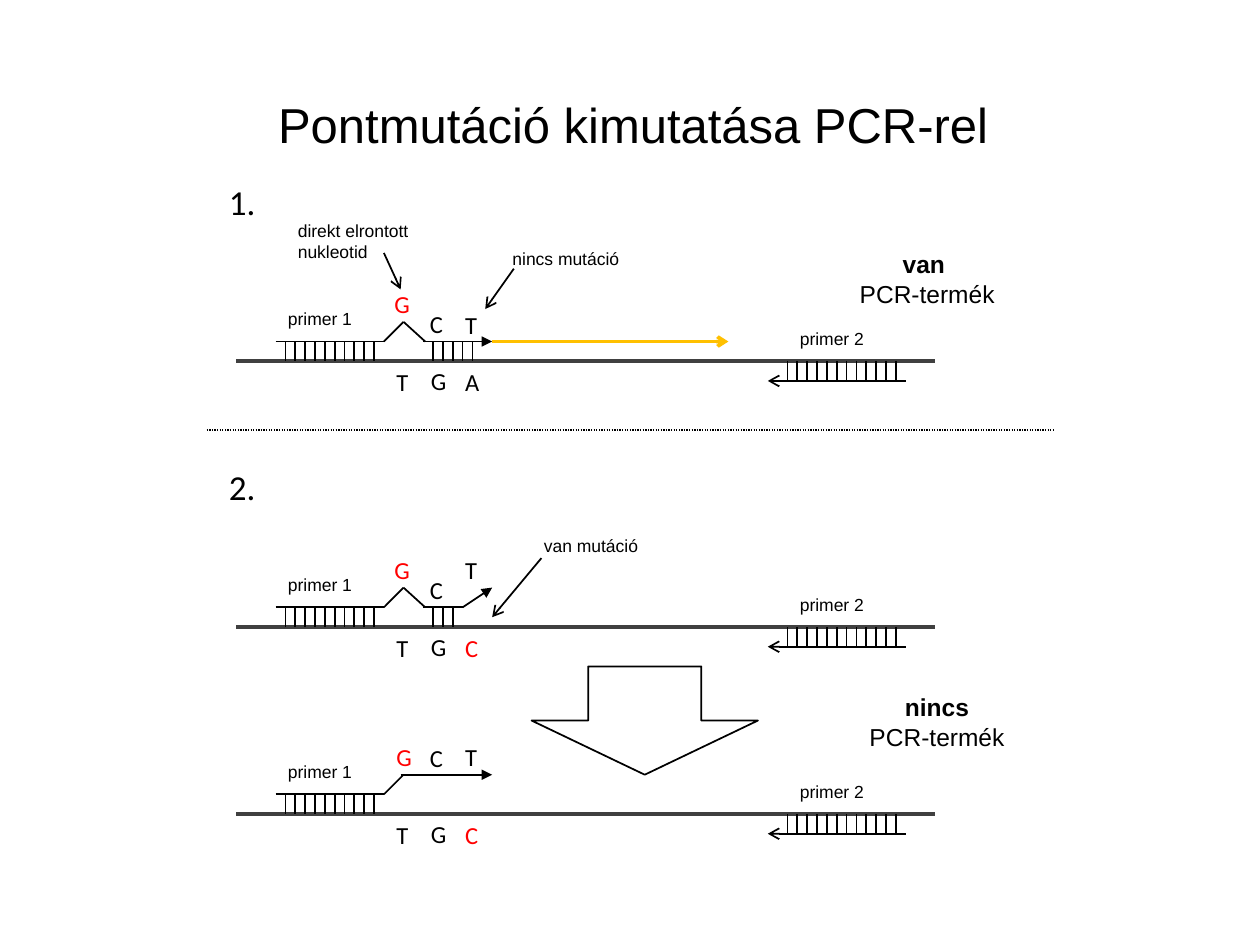
from pptx import Presentation
from pptx.dml.color import RGBColor
from pptx.enum.dml import MSO_LINE
from pptx.enum.shapes import MSO_CONNECTOR, MSO_SHAPE
from pptx.enum.text import MSO_AUTO_SIZE, PP_ALIGN
from pptx.oxml.ns import qn
from pptx.util import Inches, Pt
from lxml.etree import SubElement

CELL = 10 / 128
ROW_SHIFT = 0.7
BLACK, RED, GREY, AMBER = "000000", "FF0000", "404040", "FFC000"
BASE_WIDTHS = {"A": 4.2, "C": 4.5, "G": 4.5, "T": 4.1}


def color(value):
    return RGBColor.from_string(value)


def cells(count):
    return Inches(count * CELL)


def line(slide, start, end, stroke=BLACK, weight=1, arrow=None, dash=None):
    (x1, y1), (x2, y2) = start, end
    connector = slide.shapes.add_connector(
        MSO_CONNECTOR.STRAIGHT, cells(x1), cells(y1 + ROW_SHIFT),
        cells(x2), cells(y2 + ROW_SHIFT))
    connector.line.color.rgb = color(stroke)
    connector.line.width = Pt(weight)
    if dash:
        connector.line.dash_style = dash
    properties = connector._element.spPr
    if arrow:
        SubElement(properties.find(qn("a:ln")), qn("a:tailEnd"), type=arrow)
    SubElement(properties, qn("a:effectLst"))


def label(slide, col, row, width, height, text, size=10, font="Arial",
          ink=BLACK, align=PP_ALIGN.LEFT, bold_first=False):
    box = slide.shapes.add_textbox(
        cells(col), cells(row + ROW_SHIFT), cells(width), cells(height))
    frame = box.text_frame
    frame.text = text
    frame.word_wrap = False
    frame.auto_size = MSO_AUTO_SIZE.SHAPE_TO_FIT_TEXT
    for index, paragraph in enumerate(frame.paragraphs):
        paragraph.alignment = align
        for run in paragraph.runs:
            run.font.size = Pt(size)
            run.font.name = font
            run.font.color.rgb = color(ink)
            run.font.bold = bold_first and index == 0


def rungs(slide, first, count, top):
    for col in range(first, first + count):
        line(slide, (col, top), (col, top + 2))


def strand(slide, col, row, upper, lower, segments, tip, paired=0):
    line(slide, (col - 4, row), (col + 67, row), GREY, 2)
    line(slide, (col, row - 2), (col + 11, row - 2))
    line(slide, (col + 11, row - 2), (col + 13, row - 4))
    for (x1, y1), (x2, y2) in segments:
        line(slide, (col + x1, row + y1), (col + x2, row + y2))
    (x1, y1), (x2, y2) = tip
    line(slide, (col + x1, row + y1), (col + x2, row + y2), arrow="triangle")
    line(slide, (col + 64, row + 2), (col + 50, row + 2), arrow="arrow")

    rungs(slide, col + 1, 10, row - 2)
    rungs(slide, col + 16, paired, row - 2)
    rungs(slide, col + 52, 12, row)

    for base, dx, dy, ink in upper + lower:
        label(slide, col + dx, row + dy, BASE_WIDTHS[base], 4.3, base,
              14, "Calibri", ink)
    label(slide, col, row - 6, 9.2, 3.4, "primer 1")
    label(slide, col + 52, row - 4, 9.2, 3.4, "primer 2")


def opposite(last, ink):
    return [("T", 11, 0, BLACK), ("G", 14.5, -0.1, BLACK), (last, 18, 0, ink)]


def bulge(end):
    return [((13, -4), (15.2, -2)), ((15, -2), (end, -2))]


def outcome(slide, col, row, text):
    label(slide, col, row, 16.4, 7.3, text, 14,
          align=PP_ALIGN.CENTER, bold_first=True)


def matching_case(slide, col, row):
    label(slide, col, row, 5.7, 5.7, "1.", 20, "Calibri")
    strand(slide, col + 6, row + 19,
           [("G", 10.8, -8, RED), ("C", 14.4, -5.9, BLACK),
            ("T", 18, -5.8, BLACK)],
           opposite("A", BLACK), bulge(19), ((19, -2), (22, -2)), 5)
    line(slide, (col + 28, row + 17), (col + 52, row + 17), AMBER, 2, "arrow")
    label(slide, col + 7, row + 4, 14, 5.7, "direkt elrontott\nnukleotid")
    line(slide, (col + 17, row + 8), (col + 18.7, row + 11.7), arrow="arrow")
    label(slide, col + 28.8, row + 6.9, 13.6, 3.4, "nincs mutáció")
    line(slide, (col + 30.2, row + 9.6), (col + 27.3, row + 13.7), arrow="arrow")
    outcome(slide, col + 64, row + 7, "van \nPCR-termék")


def mutant_case(slide, col, row):
    label(slide, col, row, 5.7, 5.7, "2.", 20, "Calibri")
    strand(slide, col + 6, row + 17,
           [("G", 10.8, -8, RED), ("C", 14.4, -5.9, BLACK),
            ("T", 18, -8, BLACK)],
           opposite("C", RED), bulge(19), ((19, -2), (22, -4)), 3)
    label(slide, col + 32, row + 7, 12.2, 3.4, "van mutáció")
    line(slide, (col + 33, row + 10), (col + 28, row + 16), arrow="arrow")

    step = slide.shapes.add_shape(
        MSO_SHAPE.DOWN_ARROW, cells(col + 32), cells(row + 21 + ROW_SHIFT),
        cells(23), cells(11))
    step.shadow.inherit = False
    step.fill.background()
    step.line.color.rgb = color(BLACK)
    step.line.width = Pt(1)

    strand(slide, col + 6, row + 36,
           [("G", 11, -8, RED), ("C", 14.4, -7.9, BLACK),
            ("T", 18, -8, BLACK)],
           opposite("C", RED), [], ((12.7, -4), (22, -4)))
    outcome(slide, col + 65, row + 23, "nincs\nPCR-termék")


def main():
    deck = Presentation()
    deck.slide_width, deck.slide_height = Inches(10), Inches(7.5)
    slide = deck.slides.add_slide(deck.slide_layouts[6])
    label(slide, 27, 8.3, 75.7, 7.3, "Pontmutáció kimutatása PCR-rel", 28)
    matching_case(slide, 22, 17)
    line(slide, (21, 43), (107, 43), weight=0.75, dash=MSO_LINE.ROUND_DOT)
    mutant_case(slide, 22, 46)
    deck.save("out.pptx")


if __name__ == "__main__":
    main()
